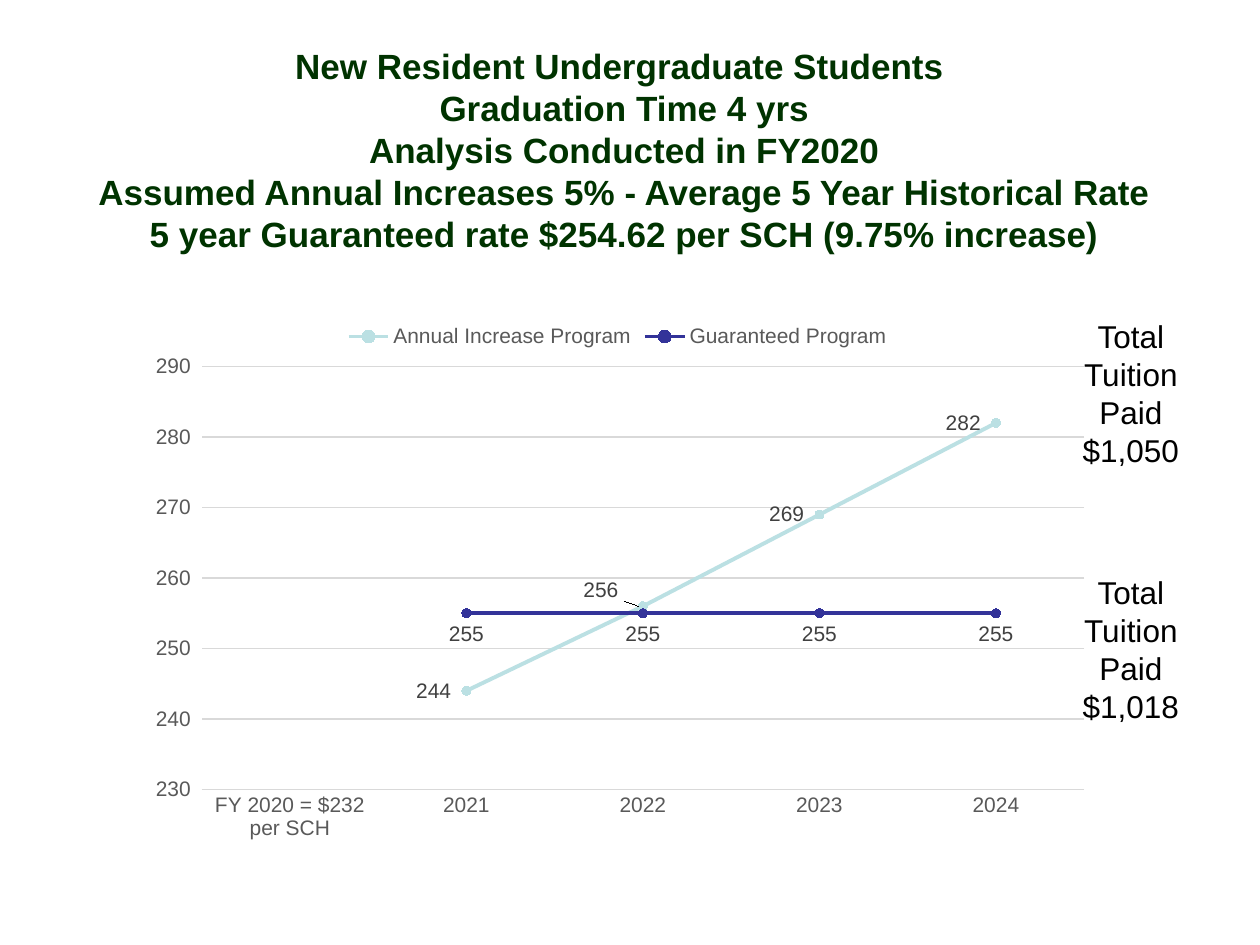
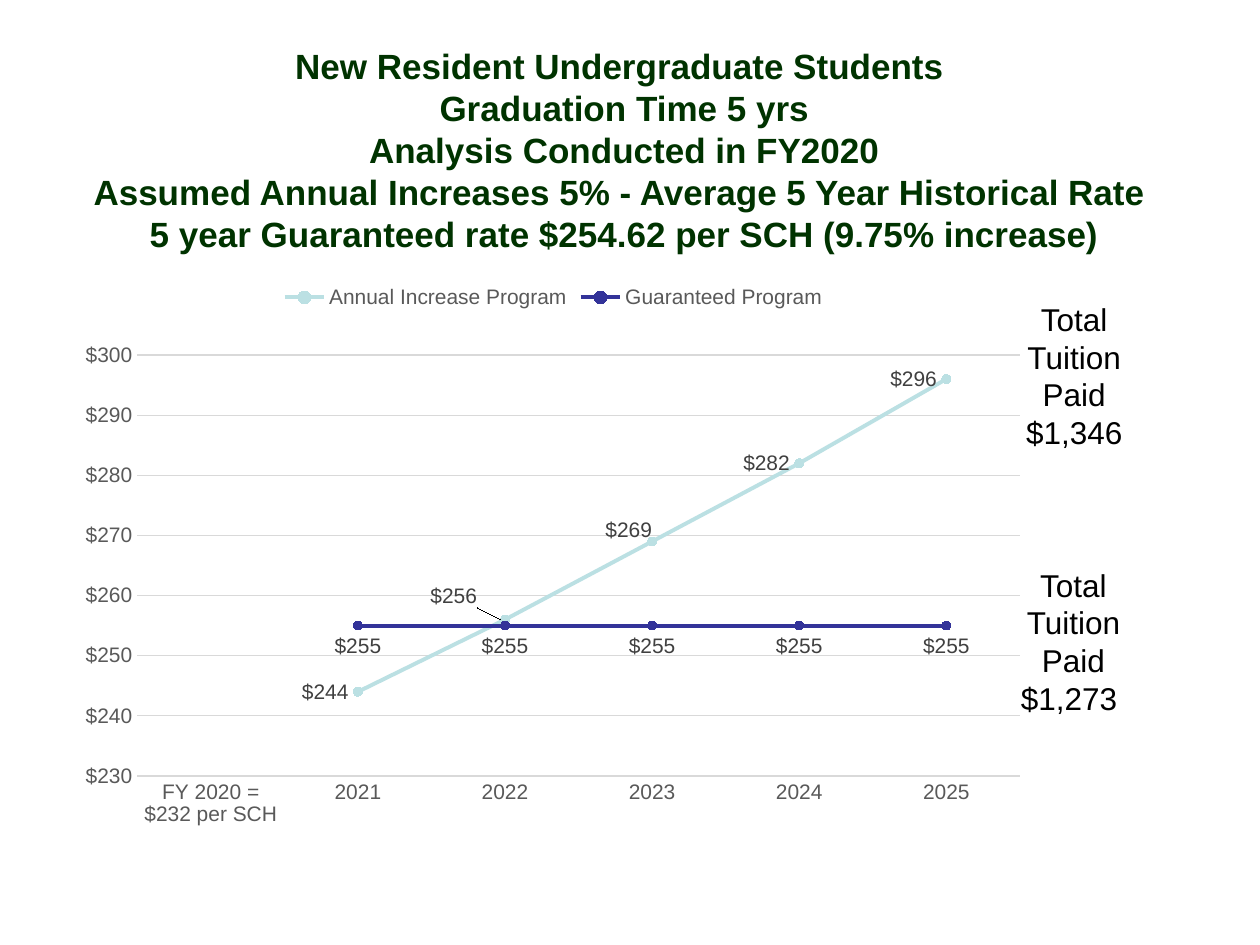
from lxml import etree
from pptx import Presentation
from pptx.chart.data import CategoryChartData as Data
from pptx.dml.color import RGBColor
from pptx.enum.chart import XL_CHART_TYPE as Kind, XL_LABEL_POSITION as Pos
from pptx.enum.chart import XL_LEGEND_POSITION as Place, XL_MARKER_STYLE as Mark
from pptx.enum.chart import XL_TICK_MARK as Tick
from pptx.enum.text import MSO_ANCHOR as Anchor, PP_ALIGN as Align
from pptx.oxml.ns import qn
from pptx.util import Inches, Pt

# Shared look
FACE, GREEN, BLACK = "Arial", "003300", "000000"
GREY, DARK, PALE = "595959", "404040", "D9D9D9"
LINES = {"Annual Increase Program": ("BBE0E3", Pos.LEFT),
         "Guaranteed Program": ("333399", Pos.BELOW)}
TITLE = ("New Resident Undergraduate Students ", "Graduation Time {} yrs",
         "Analysis Conducted in FY2020",
         "Assumed Annual Increases 5% - Average 5 Year Historical Rate{}",
         "5 year Guaranteed rate $254.62 per SCH (9.75% increase)")
RATES = [244, 256, 269, 282, 296]

# What differs: plot is left, top, width, height in inches inside the chart,
# moves shift single labels by a share of the chart size
PAGES = [
    {"years": 4, "tail": "", "chart": (1.19, 2.47, 7.42, 4.35),
     "plot": (0.4, 0.44, 7.02, 3.36), "top": 290,
     "format": r'_(* #,##0_);_(* \(#,##0\);_(* "-"_);_(@_)',
     "moves": {2: (-0.01, -0.03)},
     "totals": [("$1,018", (8.27, 4.5, 1.41, 1.31)),
                ("$1,050", (8.27, 2.47, 1.41, 1.31))]},
    {"years": 5, "tail": " ", "chart": (0.68, 2.16, 7.42, 4.54),
     "plot": (0.4, 0.66, 7.02, 3.34), "top": 300, "format": '"$"#,##0',
     "moves": {2: (-0.02, -0.04), 3: (0.01, -0.02)},
     "totals": [("$1,273 ", (7.83, 4.44, 1.38, 1.31)),
                ("$1,346", (7.95, 2.33, 1.15, 1.31))]},
]


def style(font, size, tint, bold=False):
    look = {"name": FACE, "size": Pt(size), "bold": bold}
    for key, val in look.items():
        setattr(font, key, val)
    font.color.rgb = RGBColor.from_string(tint)


def layout(sizes, inner=False):
    """Manual layout element; sizes are shares of the chart."""
    root = etree.Element(qn("c:layout"))
    man = etree.SubElement(root, qn("c:manualLayout"))
    parts = {}
    if inner:
        parts = {"layoutTarget": "inner", "xMode": "edge", "yMode": "edge"}
    parts.update(zip("xywh", sizes))
    for tag, val in parts.items():
        etree.SubElement(man, qn("c:" + tag)).set("val", str(val))
    return root


deck = Presentation()
deck.slide_width, deck.slide_height = Inches(10), Inches(7.5)

for page in PAGES:
    slide = deck.slides.add_slide(deck.slide_layouts[6])

    # Title and totals
    title = "\v".join(TITLE).format(page["years"], page["tail"])
    texts = [([title], (0.33, 0.45, 9.25, 1.47), 20, GREEN, True, Anchor.MIDDLE)]
    for total, box in page["totals"]:
        texts.append((["Total Tuition", "Paid", total], box, 18, BLACK, False,
                      Anchor.TOP))
    for paras, box, size, tint, bold, anchor in texts:
        frame = slide.shapes.add_textbox(*map(Inches, box)).text_frame
        frame.word_wrap = True
        frame.vertical_anchor = anchor
        frame.text = "\n".join(paras)
        for para in frame.paragraphs:
            para.alignment = Align.CENTER
            for run in para.runs:
                style(run.font, size, tint, bold)

    # Chart data
    count = page["years"]
    data = Data(number_format=page["format"])
    data.categories = ["FY 2020 = $232 per SCH"] + [
        str(2021 + n) for n in range(count)]
    for name, vals in zip(LINES, (RATES[:count], [255] * count)):
        data.add_series(name, [None] + vals)
    box = page["chart"]
    chart = slide.shapes.add_chart(Kind.LINE_MARKERS, *map(Inches, box),
                                   data).chart
    style(chart.font, 10, BLACK)
    chart.has_title = False

    # Legend and plot area
    chart.has_legend = True
    chart.legend.position = Place.TOP
    chart.legend.include_in_layout = False
    style(chart.legend.font, 12, GREY)
    area = chart._chartSpace.find(".//" + qn("c:plotArea"))
    for old in area.findall(qn("c:layout")):
        area.remove(old)
    shares = [round(a / b, 3) for a, b in zip(page["plot"], box[2:] * 2)]
    area.insert(0, layout(shares, inner=True))

    # Axes
    cat, val = chart.category_axis, chart.value_axis
    for axis in (cat, val):
        axis.major_tick_mark = axis.minor_tick_mark = Tick.NONE
        style(axis.tick_labels.font, 12, GREY)
    val.minimum_scale, val.maximum_scale, val.major_unit = 230, page["top"], 10
    val.has_major_gridlines = True
    val.tick_labels.number_format = page["format"]
    val.tick_labels.number_format_is_linked = False
    val.format.line.fill.background()
    for line in (cat.format.line, val.major_gridlines.format.line):
        line.color.rgb = RGBColor.from_string(PALE)
        line.width = Pt(0.75)

    # Lines, markers and labels
    plot = chart.plots[0]
    plot.vary_by_categories = False
    for ser in plot.series:
        tint, pos = LINES[ser.name]
        hue = RGBColor.from_string(tint)
        ser.smooth = False
        ser.format.line.color.rgb = hue
        ser.format.line.width = Pt(2.25)
        ser.marker.style, ser.marker.size = Mark.CIRCLE, 5
        ser.marker.format.fill.solid()
        ser.marker.format.fill.fore_color.rgb = hue
        ser.marker.format.line.color.rgb = hue
        labels = ser.data_labels
        labels.show_value = True
        labels.position = pos
        labels.number_format = page["format"]
        labels.number_format_is_linked = False
        style(labels.font, 12, DARK)

    # Labels moved clear of the lines
    first = plot.series[0]
    for idx, shift in page["moves"].items():
        label = first.points[idx].data_label
        label.position = Pos.LEFT
        style(label.font, 12, DARK)
    for item in first._element.iter(qn("c:dLbl")):
        idx = int(item.find(qn("c:idx")).get("val"))
        item.insert(1, layout(page["moves"][idx]))
        code = etree.Element(qn("c:numFmt"), formatCode=page["format"],
                             sourceLinked="0")
        item.find(qn("c:layout")).addnext(code)

deck.save("out.pptx")
